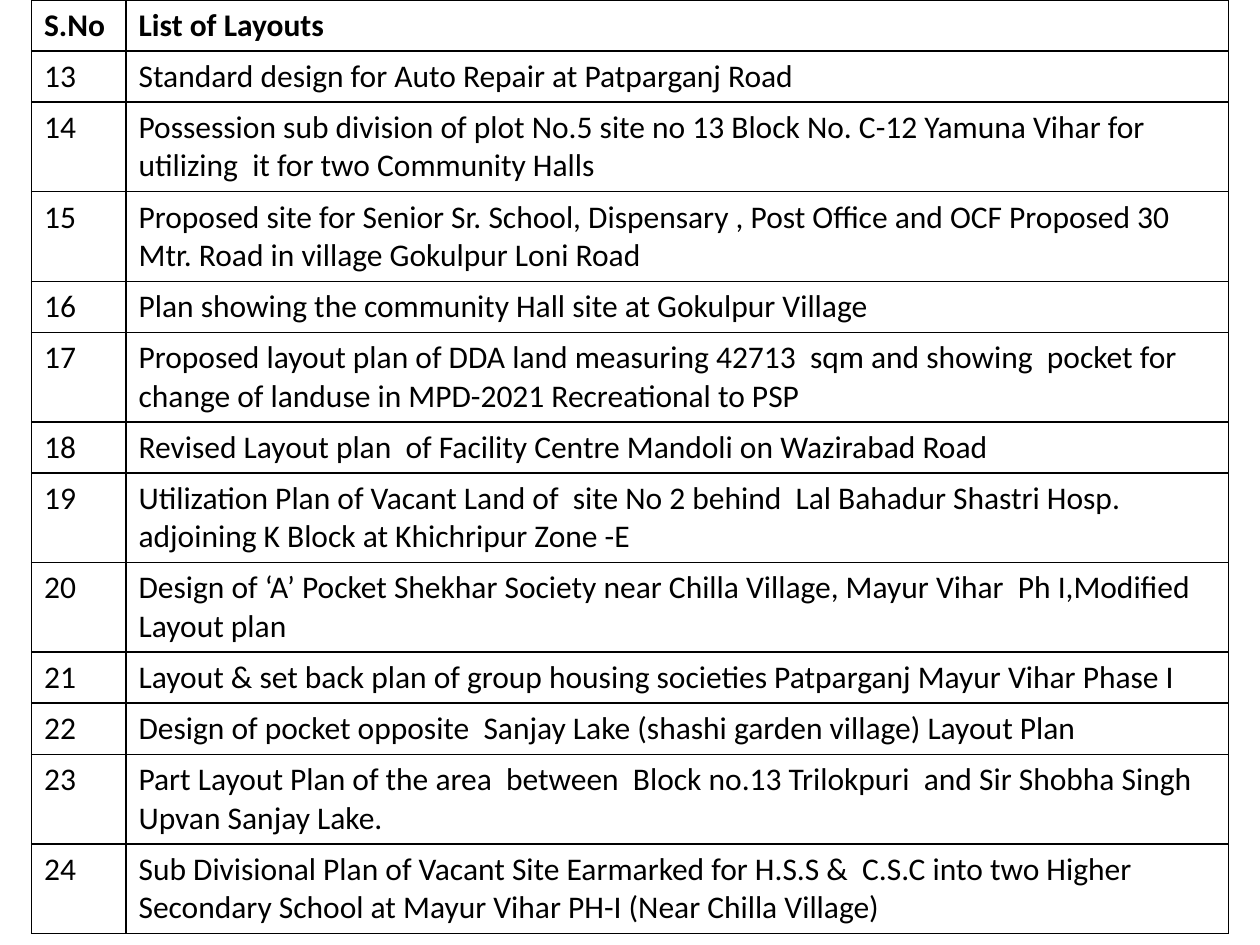
from pptx import Presentation, util as u
from pptx.dml.color import RGBColor
from pptx.oxml import parse_xml
from pptx.oxml.ns import nsdecls

INK, PAPER = "000000", "FFFFFF"
FIRST_NUMBER = 13
LINE_CAPACITY = 85  # characters that fit on one line of the wide column
ROW_HEIGHTS = {1: 0.26, 2: 0.46}  # inches, by number of text lines
COLUMN_SHARES = (0.75 / 9.5, 8.75 / 9.5)
HEADINGS = ("S.No", "List of Layouts")
LAYOUTS = [
    "Standard design for Auto Repair at Patparganj Road",
    "Possession sub division of plot No.5 site no 13 Block No. C-12 Yamuna Vihar for utilizing  it for two Community Halls",
    "Proposed site for Senior Sr. School, Dispensary , Post Office and OCF Proposed 30 Mtr. Road in village Gokulpur Loni Road",
    "Plan showing the community Hall site at Gokulpur Village",
    "Proposed layout plan of DDA land measuring 42713  sqm and showing  pocket for change of landuse in MPD-2021 Recreational to PSP",
    "Revised Layout plan  of Facility Centre Mandoli on Wazirabad Road",
    "Utilization Plan of Vacant Land of  site No 2 behind  Lal Bahadur Shastri Hosp. adjoining K Block at Khichripur Zone -E",
    "Design of ‘A’ Pocket Shekhar Society near Chilla Village, Mayur Vihar  Ph I,Modified Layout plan",
    "Layout & set back plan of group housing societies Patparganj Mayur Vihar Phase I",
    "Design of pocket opposite  Sanjay Lake (shashi garden village) Layout Plan",
    "Part Layout Plan of the area  between  Block no.13 Trilokpuri  and Sir Shobha Singh  Upvan Sanjay Lake.",
    "Sub Divisional Plan of Vacant Site Earmarked for H.S.S &  C.S.C into two Higher Secondary School at Mayur Vihar PH-I (Near Chilla Village)",
]


def colour(code):
    return RGBColor.from_string(code)


def set_borders(cell, code, points):
    """Draw all four edges; they go before the fill in the cell properties."""
    properties = cell._tc.get_or_add_tcPr()
    for position, edge in enumerate(("lnL", "lnR", "lnT", "lnB")):
        properties.insert(position, parse_xml(
            f'<a:{edge} {nsdecls("a")} w="{u.Pt(points)}"><a:solidFill>'
            f'<a:srgbClr val="{code}"/></a:solidFill></a:{edge}>'))


def fill_cell(cell, wording, bold):
    cell.text = wording
    cell.fill.solid()
    cell.fill.fore_color.rgb = colour(PAPER)
    set_borders(cell, INK, 1)
    font = cell.text_frame.paragraphs[0].runs[0].font
    for attribute, value in {"name": "Calibri", "size": u.Pt(18), "bold": bold}.items():
        setattr(font, attribute, value)
    font.color.rgb = colour(INK)


def add_layout_list(slide, left, top, width, height):
    entries = [HEADINGS] + [(str(number), title)
                            for number, title in enumerate(LAYOUTS, FIRST_NUMBER)]
    frame = slide.shapes.add_table(len(entries), len(HEADINGS), left, top, width, height)
    table = frame.table
    table.horz_banding = False

    # Column widths
    for column, share in zip(table.columns, COLUMN_SHARES):
        column.width = round(width * share)

    # Heading row, then the numbered layouts
    for index, (row, entry) in enumerate(zip(table.rows, entries)):
        lines = 2 if len(entry[1]) > LINE_CAPACITY else 1
        row.height = u.Inches(ROW_HEIGHTS[lines])
        for cell, wording in zip(row.cells, entry):
            fill_cell(cell, wording, bold=index == 0)
    frame.height = height


def main():
    deck = Presentation()
    deck.slide_width, deck.slide_height = u.Inches(10), u.Inches(7.5)
    slide = deck.slides.add_slide(deck.slide_layouts[6])
    margin = round(deck.slide_width * 0.025)
    add_layout_list(slide, margin, 0, deck.slide_width - 2 * margin, u.Inches(7.3))
    deck.save("out.pptx")


if __name__ == "__main__":
    main()
